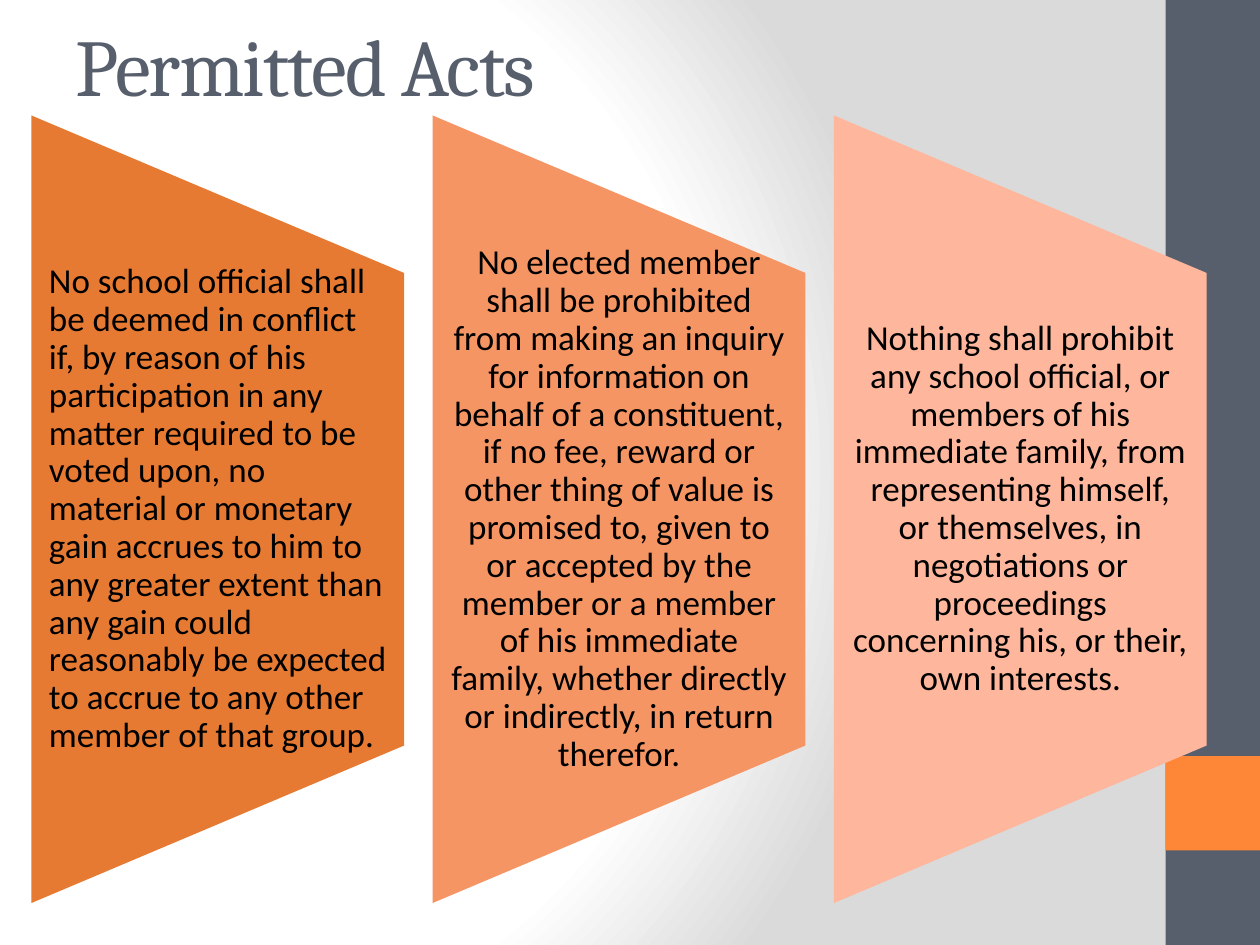
from pptx import Presentation
from pptx.dml.color import RGBColor
from pptx.enum.shapes import MSO_SHAPE
from pptx.enum.text import MSO_ANCHOR, MSO_AUTO_SIZE, PP_ALIGN
from pptx.oxml import parse_xml
from pptx.oxml.ns import nsdecls
from pptx.util import Pt

SLATE = RGBColor(0x57, 0x5F, 0x6D)
ORANGE = RGBColor(0xFE, 0x86, 0x37)
BLACK = RGBColor(0, 0, 0)
DARK_PANEL = RGBColor(0xE7, 0x7A, 0x32)
MIDDLE_PANEL = RGBColor(0xF6, 0x95, 0x64)
LIGHT_PANEL = RGBColor(0xFE, 0xB7, 0x9C)

BACKGROUND = f"""<p:bg {nsdecls("p", "a")}><p:bgPr>
<a:gradFill rotWithShape="1"><a:gsLst>
<a:gs pos="0"><a:srgbClr val="FFFFFF"/></a:gs>
<a:gs pos="75000"><a:srgbClr val="FFFFFF"/></a:gs>
<a:gs pos="100000"><a:srgbClr val="DADADA"/></a:gs>
</a:gsLst><a:path path="circle">
<a:fillToRect l="20000" t="50000" r="100000" b="50000"/>
</a:path></a:gradFill><a:effectLst/></p:bgPr></p:bg>"""

PANELS = [
    (DARK_PANEL, PP_ALIGN.LEFT,
     "No school official shall be deemed in conflict if, by reason of his "
     "participation in any matter required to be voted upon, no material or "
     "monetary gain accrues to him to any greater extent than any gain could "
     "reasonably be expected to accrue to any other member of that group."),
    (MIDDLE_PANEL, PP_ALIGN.CENTER,
     "No elected member shall be prohibited from making an inquiry for "
     "information on behalf of a constituent, if no fee, reward or other thing "
     "of value is promised to, given to or accepted by the member or a member "
     "of his immediate family, whether directly or indirectly, in return "
     "therefor."),
    (LIGHT_PANEL, PP_ALIGN.CENTER,
     "Nothing shall prohibit any school official, or members of his immediate "
     "family, from representing himself, or themselves, in negotiations or "
     "proceedings concerning his, or their, own interests."),
]
PANEL_LEFT, PANEL_PITCH, PANEL_MIDDLE = 18, 229.3, 291
PANEL_WIDTH, PANEL_HEIGHT, TEXT_HEIGHT = 213, 450, 270


def set_all(target, values):
    for name, value in values.items():
        setattr(target, name, value)


def add_filled(page, preset, left, top, width, height, color):
    shape = page.shapes.add_shape(preset, Pt(left), Pt(top), Pt(width), Pt(height))
    shape.shadow.inherit = False
    shape.fill.solid()
    shape.fill.fore_color.rgb = color
    shape.line.fill.background()
    return shape


deck = Presentation()
set_all(deck, {"slide_width": Pt(720), "slide_height": Pt(540)})
page = deck.slides.add_slide(deck.slide_layouts[5])
page.element.cSld.insert(0, parse_xml(BACKGROUND))

# Side band, kept behind the title
title = page.shapes.title
for top, height, color in [(0, 540, SLATE), (432, 54, ORANGE)]:
    band = add_filled(page, MSO_SHAPE.RECTANGLE, 666, top, 54, height, color)
    title.element.addprevious(band.element)

set_all(title, {"left": Pt(36), "top": Pt(12), "width": Pt(600), "height": Pt(50)})
set_all(title.text_frame, {"text": "Permitted Acts", "word_wrap": True,
                           "auto_size": MSO_AUTO_SIZE.NONE,
                           "vertical_anchor": MSO_ANCHOR.MIDDLE})
para = title.text_frame.paragraphs[0]
para.alignment = PP_ALIGN.LEFT
span = para.runs[0]
set_all(span.font, {"name": "Cambria", "size": Pt(46)})
span.font.color.rgb = SLATE
span.font._element.set("spc", "-100")

for index, (color, alignment, text) in enumerate(PANELS):
    left = PANEL_LEFT + index * PANEL_PITCH
    # The panel is turned on its side, so its width and height swap
    panel = add_filled(page, MSO_SHAPE.FLOWCHART_MANUAL_OPERATION,
                       left + (PANEL_WIDTH - PANEL_HEIGHT) / 2,
                       PANEL_MIDDLE - PANEL_WIDTH / 2,
                       PANEL_HEIGHT, PANEL_WIDTH, color)
    panel.rotation = 270

    box = page.shapes.add_textbox(Pt(left), Pt(PANEL_MIDDLE - TEXT_HEIGHT / 2),
                                  Pt(PANEL_WIDTH), Pt(TEXT_HEIGHT))
    set_all(box.text_frame, {"text": text, "word_wrap": True,
                             "vertical_anchor": MSO_ANCHOR.MIDDLE,
                             "margin_left": Pt(10), "margin_right": Pt(10),
                             "margin_top": 0, "margin_bottom": 0})
    para = box.text_frame.paragraphs[0]
    set_all(para, {"alignment": alignment, "line_spacing": 0.9})
    set_all(para.runs[0].font, {"name": "Calibri", "size": Pt(20)})
    para.runs[0].font.color.rgb = BLACK

deck.save("out.pptx")
